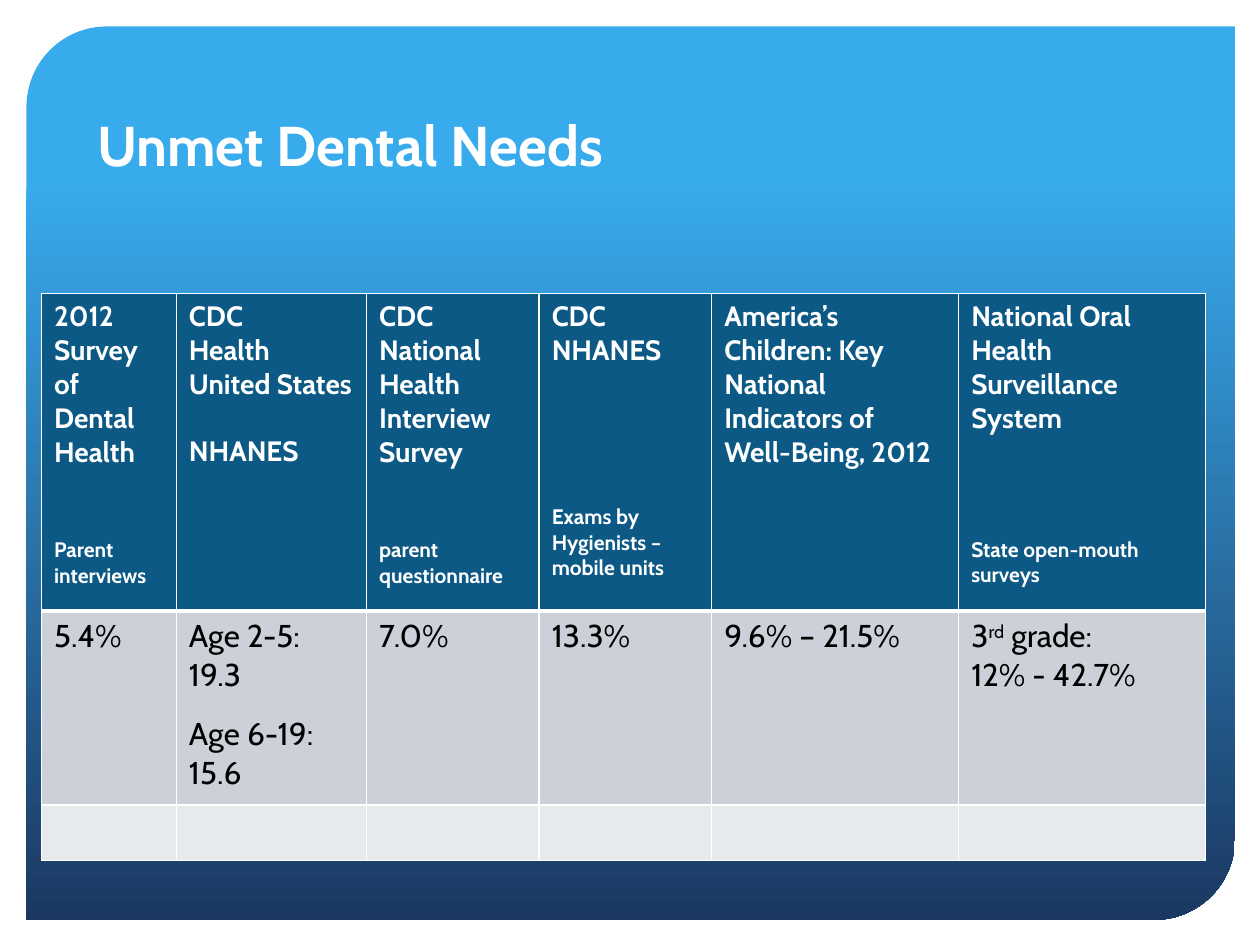
"""Build the slide comparing survey figures on unmet dental needs."""
from dataclasses import dataclass

import lxml.etree
import pptx
import pptx.dml.color
import pptx.enum.shapes
import pptx.enum.text
import pptx.oxml.ns
import pptx.util

EMU_PER_PX = 9144


@dataclass(frozen=True)
class Theme:
    font: str = "Cabin"
    white: str = "FFFFFF"
    black: str = "000000"
    panel_top: str = "38ABED"
    panel_bottom: str = "1B3861"
    header_fill: str = "0C5986"
    figures_fill: str = "CCD1D9"
    empty_fill: str = "E7EAED"
    title_size: int = 32
    header_size: int = 16
    method_size: int = 12
    figure_size: int = 18


@dataclass(frozen=True)
class Run:
    text: str
    superscript: bool = False
    break_after: bool = False


@dataclass(frozen=True)
class Line:
    runs: tuple[Run, ...]
    size: int
    space_before: int = 0


@dataclass(frozen=True)
class Row:
    height: int
    fill: str
    color: str
    bold: bool
    top_border: int
    bottom_border: int
    cells: tuple[tuple[Line, ...], ...]


THEME = Theme()


def heading(text: str, space_before: int = 0) -> Line:
    return Line((Run(text),), THEME.header_size, space_before)


def method(text: str, space_before: int) -> Line:
    return Line((Run(text),), THEME.method_size, space_before)


def figure(*runs: Run, space_before: int = 0) -> Line:
    return Line(runs, THEME.figure_size, space_before)


COLUMN_WIDTHS = (107, 151, 137, 137, 196, 196)
ROWS = (
    Row(252, THEME.header_fill, THEME.white, True, 1, 3, (
        (heading("2012 Survey of Dental Health"), method("Parent interviews", 39)),
        (heading("CDC"), heading("Health United States"), heading("NHANES", 19)),
        (heading("CDC"), heading("National Health Interview Survey"),
         method("parent questionnaire", 39)),
        (heading("CDC NHANES"), method("Exams by Hygienists – mobile units", 78)),
        (heading("America’s Children: Key National Indicators of Well-Being, 2012"),),
        (heading("National Oral Health Surveillance System"),
         method("State open-mouth surveys", 58)),
    )),
    Row(154, THEME.figures_fill, THEME.black, False, 3, 1, (
        (figure(Run("5.4%")),),
        (figure(Run("Age 2-5:", break_after=True), Run("19.3")),
         figure(Run("Age 6-19:", break_after=True), Run("15.6"), space_before=12)),
        (figure(Run("7.0%")),),
        (figure(Run("13.3%")),),
        (figure(Run("9.6% – 21.5%")),),
        (figure(Run("3"), Run("rd", superscript=True), Run(" grade:")),
         figure(Run("12% - 42.7%"))),
    )),
    Row(44, THEME.empty_fill, THEME.black, False, 1, 1, ((),) * len(COLUMN_WIDTHS)),
)


def px(length: int) -> pptx.util.Emu:
    return pptx.util.Emu(length * EMU_PER_PX)


def rgb(color: str) -> pptx.dml.color.RGBColor:
    return pptx.dml.color.RGBColor.from_string(color)


def write_line(paragraph, line: Line, color: str, bold: bool) -> None:
    if line.space_before:
        paragraph.space_before = pptx.util.Pt(line.space_before)
    for part in line.runs:
        run = paragraph.add_run()
        run.text = part.text
        run.font.name = THEME.font
        run.font.size = pptx.util.Pt(line.size)
        run.font.bold = bold
        run.font.color.rgb = rgb(color)
        if part.superscript:
            run.font._element.set("baseline", "30000")
        if part.break_after:
            paragraph.add_line_break()


def set_borders(cell, top: int, bottom: int) -> None:
    properties = cell._tc.get_or_add_tcPr()
    sides = (("lnL", 1), ("lnR", 1), ("lnT", top), ("lnB", bottom))
    for position, (side, width) in enumerate(sides):
        border = lxml.etree.Element(
            pptx.oxml.ns.qn(f"a:{side}"), w=str(pptx.util.Pt(width)))
        fill = lxml.etree.SubElement(border, pptx.oxml.ns.qn("a:solidFill"))
        lxml.etree.SubElement(fill, pptx.oxml.ns.qn("a:srgbClr"), val=THEME.white)
        properties.insert(position, border)


def draw_panel(slide) -> None:
    panel = slide.shapes.add_shape(
        pptx.enum.shapes.MSO_SHAPE.ROUND_2_DIAG_RECTANGLE,
        px(21), px(21), px(959), px(709))
    panel.shadow.inherit = False
    panel.adjustments[0] = 0.09
    panel.adjustments[1] = 0
    panel.line.fill.background()
    panel.fill.gradient()
    panel.fill.gradient_angle = 270
    stops = ((0.17, THEME.panel_top), (1, THEME.panel_bottom))
    for stop, (position, color) in zip(panel.fill.gradient_stops, stops):
        stop.position = position
        stop.color.rgb = rgb(color)


def draw_table(slide) -> None:
    table = slide.shapes.add_table(
        len(ROWS), len(COLUMN_WIDTHS), px(33), px(233),
        px(sum(COLUMN_WIDTHS)), px(sum(row.height for row in ROWS))).table
    table.horz_banding = False
    for column, width in zip(table.columns, COLUMN_WIDTHS):
        column.width = px(width)
    for row_index, row in enumerate(ROWS):
        table.rows[row_index].height = px(row.height)
        for column_index, lines in enumerate(row.cells):
            cell = table.cell(row_index, column_index)
            cell.fill.solid()
            cell.fill.fore_color.rgb = rgb(row.fill)
            set_borders(cell, row.top_border, row.bottom_border)
            for line_index, line in enumerate(lines):
                frame = cell.text_frame
                paragraph = frame.add_paragraph() if line_index else frame.paragraphs[0]
                write_line(paragraph, line, row.color, row.bold)


def draw_title(slide) -> None:
    title = slide.shapes.title
    title.left, title.top, title.width, title.height = px(67), px(83), px(450), px(64)
    frame = title.text_frame
    frame.word_wrap = False
    frame.auto_size = pptx.enum.text.MSO_AUTO_SIZE.SHAPE_TO_FIT_TEXT
    frame.vertical_anchor = pptx.enum.text.MSO_ANCHOR.TOP
    paragraph = frame.paragraphs[0]
    paragraph.alignment = pptx.enum.text.PP_ALIGN.LEFT
    line = Line((Run("Unmet Dental Needs"),), THEME.title_size)
    write_line(paragraph, line, THEME.white, True)
    slide.shapes._spTree.append(title._element)


def main() -> None:
    presentation = pptx.Presentation()
    presentation.slide_width, presentation.slide_height = px(1000), px(750)
    slide = presentation.slides.add_slide(presentation.slide_layouts[5])
    draw_panel(slide)
    draw_table(slide)
    draw_title(slide)
    presentation.save("out.pptx")


if __name__ == "__main__":
    main()
